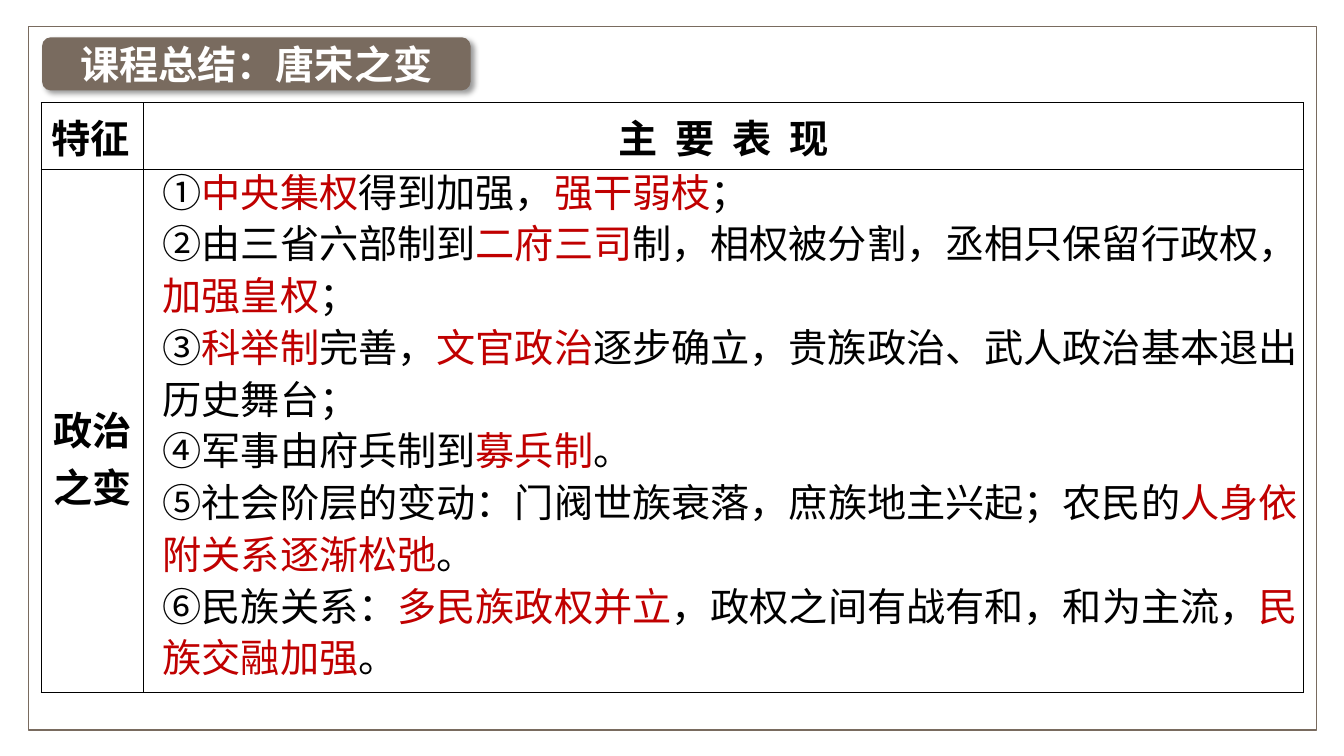
import pptx
import pptx.util
import pptx.dml.color
import pptx.enum.shapes
import pptx.enum.text
import pptx.oxml
import pptx.oxml.ns

Cm = pptx.util.Cm
Pt = pptx.util.Pt
CENTER = pptx.enum.text.PP_ALIGN.CENTER
LEFT = pptx.enum.text.PP_ALIGN.LEFT
MIDDLE = pptx.enum.text.MSO_ANCHOR.MIDDLE
SHAPES = pptx.enum.shapes.MSO_SHAPE

FONT = "Noto Sans CJK SC"
BLACK, RED, WHITE, BROWN = "000000", "C00000", "FFFFFF", "796B5F"

TITLE = "课程总结：唐宋之变"
FEATURE_HEADING = "特征"
EVIDENCE_HEADING = "主 要 表 现"
FEATURE = "政治之变"
EVIDENCE = [
    [("①", BLACK), ("中央集权", RED), ("得到加强，", BLACK), ("强干弱枝", RED), ("；", BLACK)],
    [("②由三省六部制到", BLACK), ("二府三司", RED),
     ("制，相权被分割，丞相只保留行政权，", BLACK), ("加强皇权", RED), ("；", BLACK)],
    [("③", BLACK), ("科举制", RED), ("完善，", BLACK), ("文官政治", RED),
     ("逐步确立，贵族政治、武人政治基本退出历史舞台；", BLACK)],
    [("④军事由府兵制到", BLACK), ("募兵制", RED), ("。", BLACK)],
    [("⑤社会阶层的变动：门阀世族衰落，庶族地主兴起；农民的", BLACK),
     ("人身依附关系逐渐松弛", RED), ("。", BLACK)],
    [("⑥民族关系：", BLACK), ("多民族政权并立", RED),
     ("，政权之间有战有和，和为主流，", BLACK), ("民族交融加强", RED), ("。", BLACK)],
]

COLUMN_WIDTHS = (2.57, 29.24)
ROW_HEIGHTS = (1.45, 13.18)
TABLE_LEFT, TABLE_TOP = 1.04, 2.59
FEATURE_DROP = 5.82


def color(hex_code):
    return pptx.dml.color.RGBColor.from_string(hex_code)


def box(left, top, width, height):
    return Cm(left), Cm(top), Cm(width), Cm(height)


def add_run(paragraph, text, hex_code, bold=False):
    run = paragraph.add_run()
    run.text = text
    run.font.size = Pt(28)
    run.font.bold = bold
    run.font.name = FONT
    run.font.color.rgb = color(hex_code)
    east_asian = pptx.oxml.parse_xml(
        f'<a:ea {pptx.oxml.ns.nsdecls("a")} typeface="{FONT}"/>')
    run.font._element.find(pptx.oxml.ns.qn("a:latin")).addnext(east_asian)
    return run


def add_shadow(shape):
    shape.shadow.inherit = False
    effects = shape._element.spPr.find(pptx.oxml.ns.qn("a:effectLst"))
    effects.append(pptx.oxml.parse_xml(
        f'<a:outerShdw {pptx.oxml.ns.nsdecls("a")} blurRad="{Pt(4)}" dist="{Pt(3)}" '
        f'dir="2700000" algn="tl" rotWithShape="0"><a:srgbClr val="{BLACK}">'
        '<a:alpha val="40000"/></a:srgbClr></a:outerShdw>'))


def add_borders(cell):
    properties = cell._tc.get_or_add_tcPr()
    for place, side in enumerate(("lnL", "lnR", "lnT", "lnB")):
        properties.insert(place, pptx.oxml.parse_xml(
            f'<a:{side} {pptx.oxml.ns.nsdecls("a")} w="{Pt(1)}"><a:solidFill>'
            f'<a:srgbClr val="{BLACK}"/></a:solidFill></a:{side}>'))


def add_frame(slide):
    frame = slide.shapes.add_shape(SHAPES.RECTANGLE, *box(0.72, 0.67, 32.46, 17.73))
    frame.shadow.inherit = False
    frame.fill.background()
    frame.line.color.rgb = color(BROWN)
    frame.line.width = Pt(0.9)


def add_title(slide):
    title = slide.shapes.add_shape(SHAPES.ROUNDED_RECTANGLE, *box(1.06, 0.94, 10.8, 1.34))
    add_shadow(title)
    title.fill.solid()
    title.fill.fore_color.rgb = color(BROWN)
    title.line.fill.background()
    title.text_frame.vertical_anchor = MIDDLE
    paragraph = title.text_frame.paragraphs[0]
    paragraph.alignment = CENTER
    add_run(paragraph, TITLE, WHITE, bold=True)


def add_summary_table(slide):
    summary = slide.shapes.add_table(
        2, 2, *box(TABLE_LEFT, TABLE_TOP, sum(COLUMN_WIDTHS), sum(ROW_HEIGHTS))).table
    summary.first_row = False
    summary.horz_banding = False
    for column, width in zip(summary.columns, COLUMN_WIDTHS):
        column.width = Cm(width)
    for row, height in zip(summary.rows, ROW_HEIGHTS):
        row.height = Cm(height)
    for cell in summary.iter_cells():
        cell.fill.background()
        add_borders(cell)

    labels = [(0, 0, FEATURE_HEADING, LEFT), (0, 1, EVIDENCE_HEADING, CENTER),
              (1, 0, FEATURE, CENTER)]
    for row, column, text, alignment in labels:
        paragraph = summary.cell(row, column).text_frame.paragraphs[0]
        paragraph.alignment = alignment
        run = add_run(paragraph, text, BLACK, bold=True)
        if text == EVIDENCE_HEADING:
            run.font._element.set("spc", "320")
    summary.cell(1, 0).margin_top = Cm(FEATURE_DROP)


def add_evidence(slide):
    evidence = slide.shapes.add_textbox(*box(3.85, 3.99, 29.31, 13.41)).text_frame
    evidence.word_wrap = True
    evidence.auto_size = pptx.enum.text.MSO_AUTO_SIZE.SHAPE_TO_FIT_TEXT
    for number, point in enumerate(EVIDENCE):
        paragraph = evidence.add_paragraph() if number else evidence.paragraphs[0]
        paragraph.line_spacing = 1.1
        for text, hex_code in point:
            add_run(paragraph, text, hex_code)


def main():
    deck = pptx.Presentation()
    deck.slide_width, deck.slide_height = Cm(33.87), Cm(19.05)
    slide = deck.slides.add_slide(deck.slide_layouts[6])
    add_frame(slide)
    add_title(slide)
    add_summary_table(slide)
    add_evidence(slide)
    deck.save("out.pptx")


if __name__ == "__main__":
    main()
